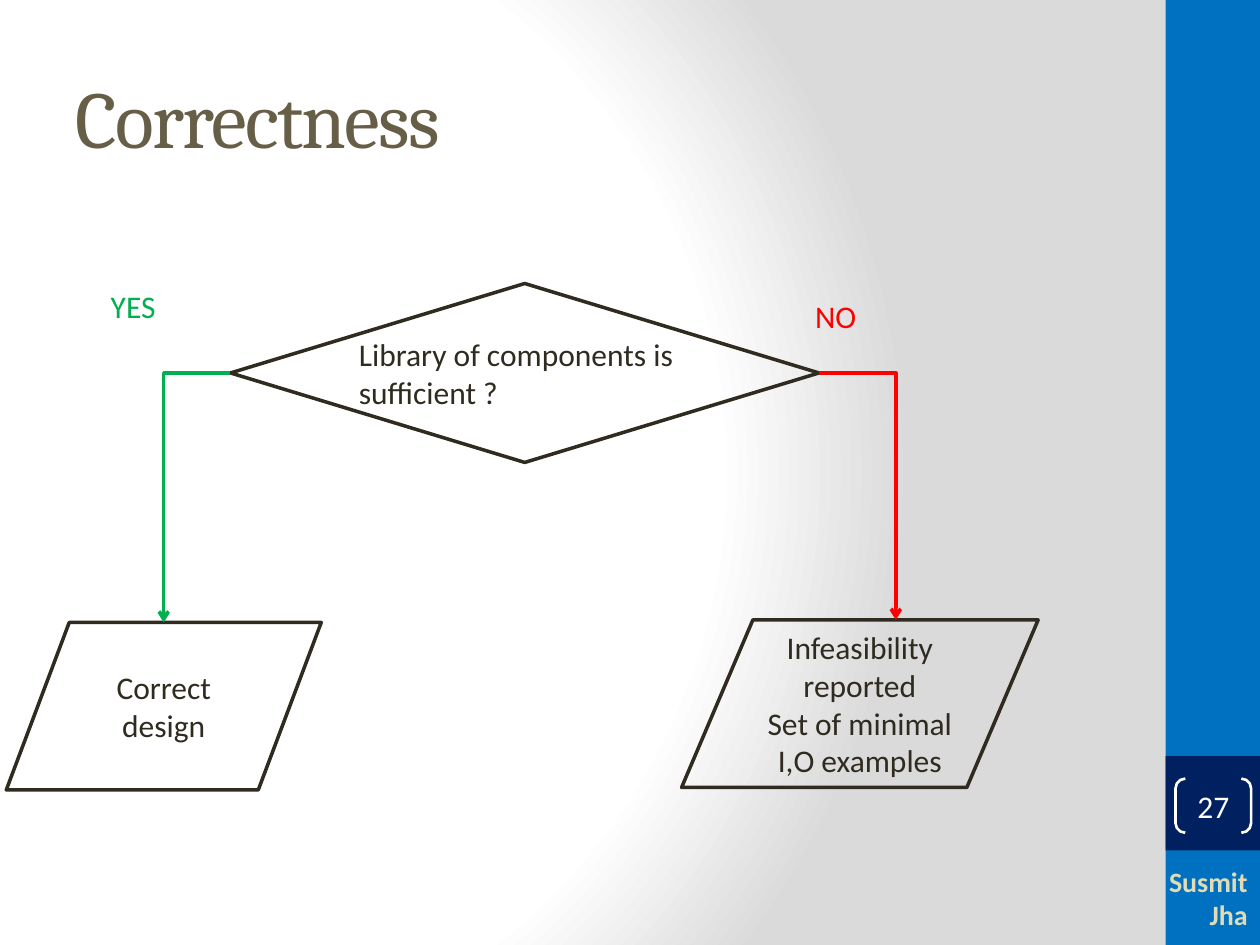
from lxml import etree
from pptx import Presentation
from pptx.dml.color import RGBColor
from pptx.enum.shapes import MSO_CONNECTOR, MSO_SHAPE
from pptx.enum.text import MSO_ANCHOR, PP_ALIGN
from pptx.oxml import parse_xml
from pptx.oxml.ns import qn
from pptx.util import Inches, Pt

LEFT, CENTER, RIGHT = PP_ALIGN.LEFT, PP_ALIGN.CENTER, PP_ALIGN.RIGHT
TOP, MIDDLE = MSO_ANCHOR.TOP, MSO_ANCHOR.MIDDLE
RECTANGLE, DIAMOND = MSO_SHAPE.RECTANGLE, MSO_SHAPE.DIAMOND
DATA, BRACKETS = MSO_SHAPE.FLOWCHART_DATA, MSO_SHAPE.DOUBLE_BRACKET
ELBOW = MSO_CONNECTOR.ELBOW
INK, GREEN, RED, WHITE = "2F2B20", "00B050", "FF0000", "FFFFFF"

BACKGROUND = """
<p:bg xmlns:p="http://schemas.openxmlformats.org/presentationml/2006/main"
      xmlns:a="http://schemas.openxmlformats.org/drawingml/2006/main">
  <p:bgPr>
    <a:gradFill rotWithShape="1">
      <a:gsLst>
        <a:gs pos="0"><a:srgbClr val="FFFFFF"/></a:gs>
        <a:gs pos="75000"><a:srgbClr val="FFFFFF"/></a:gs>
        <a:gs pos="100000"><a:srgbClr val="DADADA"/></a:gs>
      </a:gsLst>
      <a:path path="circle">
        <a:fillToRect l="20000" t="50000" r="100000" b="50000"/>
      </a:path>
    </a:gradFill>
    <a:effectLst/>
  </p:bgPr>
</p:bg>"""


def write(shape, text, size=18, color=INK, font="Calibri", bold=False,
          align=LEFT, anchor=TOP):
    """Fill a shape with text, one paragraph per line."""
    frame = shape.text_frame
    frame.word_wrap = True
    frame.vertical_anchor = anchor
    frame.text = text
    for paragraph in frame.paragraphs:
        paragraph.alignment = align
        run_font = paragraph.runs[0].font
        run_font.size = Pt(size)
        run_font.name = font
        run_font.bold = bold
        run_font.color.rgb = RGBColor.from_string(color)


def add_box(kind, box, fill=None, line=None, width=2):
    shape = slide.shapes.add_shape(kind, *map(Inches, box))
    shape.shadow.inherit = False
    if fill:
        shape.fill.solid()
        shape.fill.fore_color.rgb = RGBColor.from_string(fill)
    else:
        shape.fill.background()
    if line:
        shape.line.color.rgb = RGBColor.from_string(line)
        shape.line.width = Pt(width)
    else:
        shape.line.fill.background()
    return shape


presentation = Presentation()
presentation.slide_width = Inches(10)
presentation.slide_height = Inches(7.5)
slide = presentation.slides.add_slide(presentation.slide_layouts[5])
slide.element.cSld.insert(0, parse_xml(BACKGROUND))

# Side band and title
add_box(RECTANGLE, (9.25, 0, 0.75, 7.5), fill="0070C0")
add_box(RECTANGLE, (9.25, 6, 0.75, 0.75), fill="002060")
title = slide.shapes.title
title.left, title.top = Inches(0.5), Inches(0.3)
title.width, title.height = Inches(8.33), Inches(1.25)
write(title, "Correctness", size=46, color="675E47", font="Cambria", anchor=MIDDLE)
title.text_frame.paragraphs[0].runs[0].font._element.set("spc", "-100")

# Decision and its two outcomes
add_box(DIAMOND, (1.83, 2.25, 4.67, 1.42), line=INK)
outcomes = [
    ((0.05, 4.94, 2.5, 1.33), "Correct design"),
    ((5.41, 4.92, 2.83, 1.33), "Infeasibility reported\nSet of minimal I,O examples"),
]
for box, text in outcomes:
    write(add_box(DATA, box, line=INK), text, align=CENTER, anchor=MIDDLE)

branches = [
    (1.83, 1.3, 4.94, GREEN),
    (6.5, 7.11, 4.92, RED),
]
for start_x, end_x, end_y, color in branches:
    connector = slide.shapes.add_connector(
        ELBOW, Inches(start_x), Inches(2.96), Inches(end_x), Inches(end_y))
    connector.line.color.rgb = RGBColor.from_string(color)
    connector.line.width = Pt(2)
    properties = connector._element.spPr
    properties.find(qn("a:prstGeom")).set("prst", "bentConnector2")
    etree.SubElement(properties.find(qn("a:ln")), qn("a:tailEnd"), type="arrow")
    etree.SubElement(properties, qn("a:effectLst"))

# Free-standing text
labels = [
    ((2.75, 2.61, 3.17, 0.71), "Library of components is sufficient ?", {}),
    ((0.78, 2.23, 0.92, 0.4), "YES", {"color": GREEN}),
    ((6.37, 2.31, 0.92, 0.4), "NO", {"color": RED}),
    ((8.83, 6.75, 1.17, 0.75), "Susmit Jha",
     {"size": 16, "color": "DFDCB7", "bold": True, "align": RIGHT, "anchor": MIDDLE}),
]
for box, text, text_format in labels:
    write(slide.shapes.add_textbox(*map(Inches, box)), text, **text_format)

# Page number
page_number = add_box(BRACKETS, (9.33, 6.18, 0.6, 0.43), line=WHITE, width=1.5)
page_number.adjustments[0] = 0.18
frame = page_number.text_frame
frame.margin_left = frame.margin_right = frame.margin_top = frame.margin_bottom = 0
write(page_number, "27", color=WHITE, align=CENTER, anchor=MIDDLE)

presentation.save("out.pptx")
